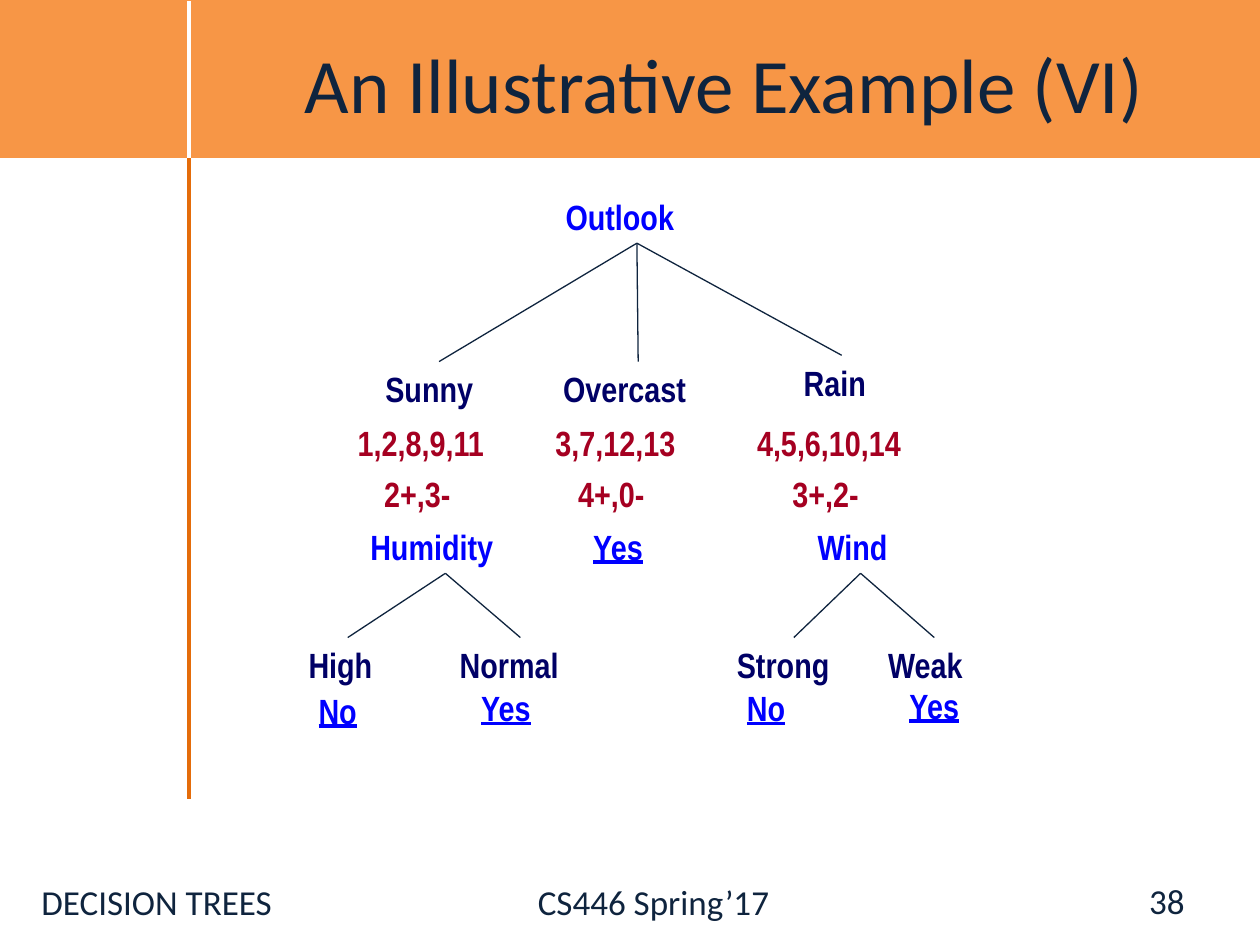
from lxml import etree
from pptx import Presentation
from pptx.dml.color import RGBColor
from pptx.enum.shapes import MSO_CONNECTOR, MSO_SHAPE
from pptx.enum.text import MSO_ANCHOR, MSO_AUTO_SIZE, PP_ALIGN
from pptx.oxml.ns import qn
from pptx.util import Inches, Pt

STRAIGHT = MSO_CONNECTOR.STRAIGHT
RECTANGLE = MSO_SHAPE.RECTANGLE
MIDDLE = MSO_ANCHOR.MIDDLE
CENTER, RIGHT = PP_ALIGN.CENTER, PP_ALIGN.RIGHT
TOP_SIDE, BOTTOM_SIDE = 0, 2

COLORS = {
    "band": "F79646", "rule": "E46C0A", "white": "FFFFFF", "ink": "0F243E",
    "attribute": "0000FF", "value": "000066", "examples": "A50021", "label": "0000FF",
}

deck = Presentation()
deck.slide_width, deck.slide_height = Inches(10), Inches(7.5)
page = deck.slides.add_slide(deck.slide_layouts[5])

# Header band and the column to the left of the content
BAND_HEIGHT = 1.25
MARGIN = 1.5


def add_text(text, left, top, width, height, color, font="Calibri"):
    box = page.shapes.add_textbox(Inches(left), Inches(top), Inches(width), Inches(height))
    box.text_frame.word_wrap = True
    box.text_frame.text = text
    for span in box.text_frame.paragraphs[0].runs:
        span.font.name = font
        span.font.size = Pt(20)
        span.font.color.rgb = RGBColor.from_string(COLORS[color])
    return box


def add_line(start, end, color, weight):
    line = page.shapes.add_connector(STRAIGHT, *[Inches(n) for n in (*start, *end)])
    line.line.color.rgb = RGBColor.from_string(COLORS[color])
    line.line.width = Pt(weight)
    etree.SubElement(line.element.spPr, qn("a:effectLst"))
    return line


# Title, with the band placed behind it
title = page.shapes.title
title.left, title.top = Inches(MARGIN), Inches(0.03)
title.width, title.height = Inches(10 - MARGIN), Inches(BAND_HEIGHT)
frame = title.text_frame
frame.text = "An Illustrative Example (VI)"
frame.auto_size = MSO_AUTO_SIZE.NONE
frame.vertical_anchor = MIDDLE
para = frame.paragraphs[0]
para.alignment = CENTER
span = para.runs[0]
span.font.name = "Calibri"
span.font.size = Pt(44)
span.font.color.rgb = RGBColor.from_string(COLORS["ink"])

band = page.shapes.add_shape(RECTANGLE, 0, 0, deck.slide_width, Inches(BAND_HEIGHT))
band.shadow.inherit = False
band.fill.solid()
band.fill.fore_color.rgb = RGBColor.from_string(COLORS["band"])
band.line.color.rgb = RGBColor.from_string(COLORS["band"])
band.line.width = Pt(0.75)
title.element.addprevious(band.element)

# Margin rule: white on the band, orange below it
add_line((MARGIN, BAND_HEIGHT), (MARGIN, 6.34), "rule", 2.5)
add_line((MARGIN, 0.01), (MARGIN, BAND_HEIGHT), "white", 2.5)

# Tree texts: row top and kind, then (text, left, width, shift from the row)
ROW_HEIGHT = 0.43
ROWS = [
    (1.5, "attribute", [("Outlook", 4.39, 1.33, 0)]),
    (2.87, "value", [("Sunny", 2.96, 1.05, 0), ("Overcast", 4.37, 1.39, 0),
                     ("Rain", 6.28, 0.8, -0.05)]),
    (3.3, "examples", [("1,2,8,9,11", 2.74, 1.43, 0), ("3,7,12,13", 4.31, 1.36, 0),
                       ("4,5,6,10,14", 5.91, 1.59, 0)]),
    (3.7, "examples", [("2+,3-", 2.95, 0.84, 0), ("4+,0-", 4.49, 0.84, 0),
                       ("3+,2-", 6.19, 0.84, 0)]),
    (4.12, "attribute", [("Humidity", 2.84, 1.39, 0), ("Wind", 6.39, 0.88, 0)]),
    (4.12, "label", [("Yes", 4.61, 0.7, 0)]),
    (5.06, "value", [("High", 2.35, 0.82, 0), ("Normal", 3.55, 1.16, 0),
                     ("Strong", 5.75, 1.1, 0), ("Weak", 6.95, 0.93, 0)]),
    (5.4, "label", [("No", 2.43, 0.57, 0.02), ("Yes", 3.72, 0.7, 0),
                    ("No", 5.83, 0.57, 0), ("Yes", 7.12, 0.7, -0.02)]),
]
nodes = {}
for top, kind, entries in ROWS:
    for text, left, width, shift in entries:
        box = add_text(text, left, top + shift, width, ROW_HEIGHT, kind, "Arial Narrow")
        font = box.text_frame.paragraphs[0].runs[0].font
        font.bold = True
        if kind == "label":
            font.underline = True
        else:
            nodes[text] = box

# Branches from each attribute to its values
BRANCHES = {
    "Outlook": ["Sunny", "Overcast", "Rain"],
    "Humidity": ["High", "Normal"],
    "Wind": ["Strong", "Weak"],
}
for attribute, values in BRANCHES.items():
    for value in values:
        branch = add_line((0, 0), (1, 1), "ink", 0.75)
        branch.begin_connect(nodes[attribute], BOTTOM_SIDE)
        branch.end_connect(nodes[value], TOP_SIDE)

# Footer with a tab stop for the course name, and the page number
footer = add_text("DECISION TREES\tCS446 Spring’17", 0.23, 6.94, 9.6, 0.56, "ink")
tabs = etree.SubElement(footer.text_frame.paragraphs[0]._p.get_or_add_pPr(), qn("a:tabLst"))
etree.SubElement(tabs, qn("a:tab"), pos=str(Inches(3.94)), algn="l")

number = add_text("38", 7.17, 6.95, 2.33, 0.4, "ink")
number.text_frame.vertical_anchor = MIDDLE
number.text_frame.paragraphs[0].alignment = RIGHT

deck.save("out.pptx")
